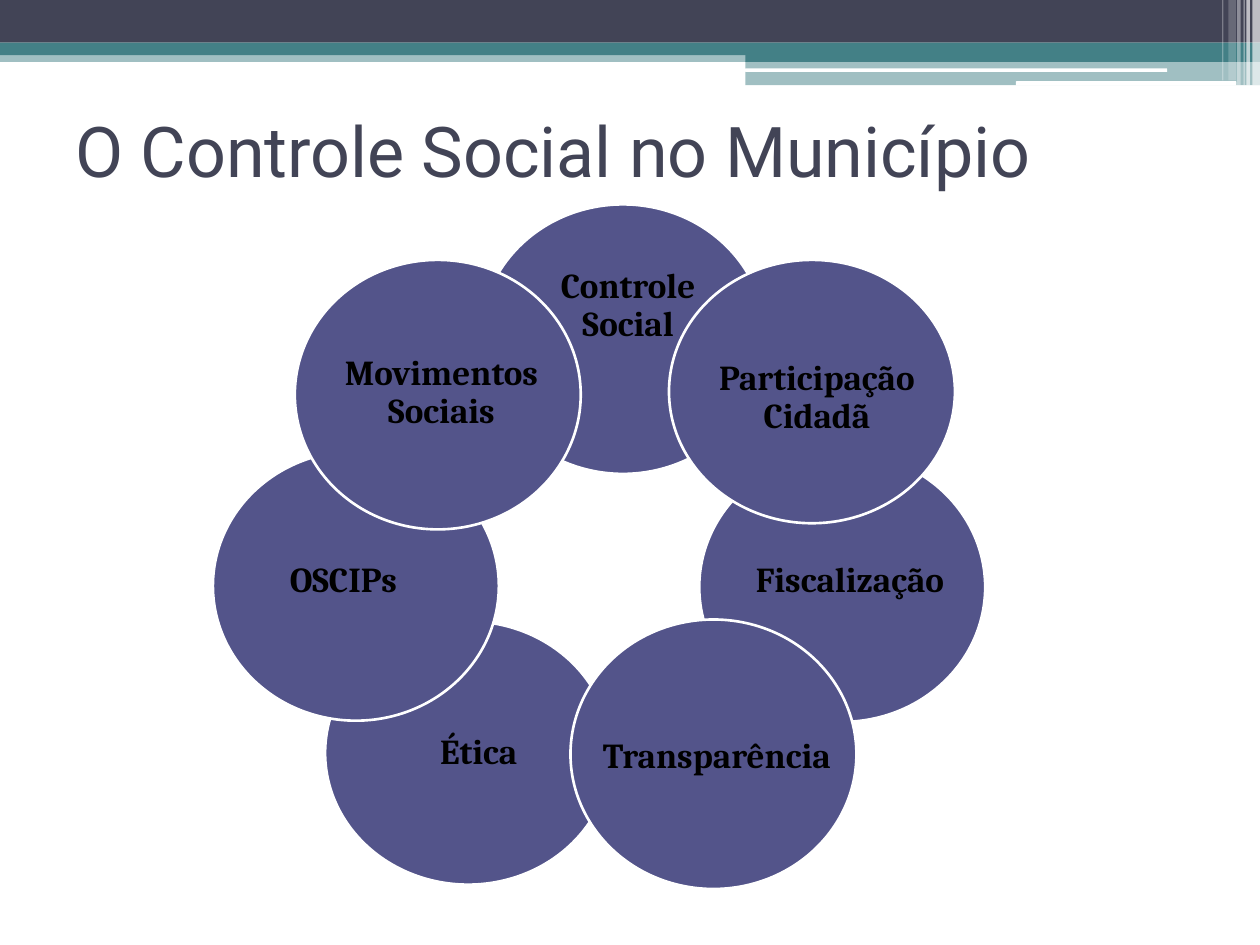
import pptx
import pptx.dml.color
import pptx.enum.shapes
import pptx.enum.text
import pptx.oxml
import pptx.oxml.ns
import pptx.util

Pt = pptx.util.Pt
SHAPES = pptx.enum.shapes.MSO_SHAPE
ALIGN = pptx.enum.text.PP_ALIGN

COLORS = {
    "white": "FFFFFF",
    "slate": "424456",
    "teal": "438086",
    "indigo": "53548A",
    "black": "000000",
}

deck = pptx.Presentation()
deck.slide_width, deck.slide_height = Pt(720), Pt(540)
page = deck.slides.add_slide(deck.slide_layouts[6])


def add_filled(kind, bounds, color, opacity=100):
    shape = page.shapes.add_shape(kind, *map(Pt, bounds))
    shape.shadow.inherit = False
    shape.line.fill.background()
    shape.fill.solid()
    shape.fill.fore_color.rgb = pptx.dml.color.RGBColor.from_string(COLORS[color])
    if opacity < 100:
        color_node = shape.fill._xPr.find(".//" + pptx.oxml.ns.qn("a:srgbClr"))
        color_node.append(pptx.oxml.parse_xml(
            f'<a:alpha {pptx.oxml.ns.nsdecls("a")} val="{opacity * 1000}"/>'))
    return shape


def add_text(bounds, text, font, size, color, margin):
    box = page.shapes.add_textbox(*map(Pt, bounds))
    frame = box.text_frame
    frame.word_wrap = True
    frame.vertical_anchor = pptx.enum.text.MSO_ANCHOR.MIDDLE
    frame.margin_left = frame.margin_right = Pt(margin)
    frame.margin_top = frame.margin_bottom = Pt(margin / 2)
    frame.text = text
    para = frame.paragraphs[0]
    span = para.runs[0]
    span.font.name = font
    span.font.size = Pt(size)
    span.font.color.rgb = pptx.dml.color.RGBColor.from_string(COLORS[color])
    return para


# Header bands
for bounds, color, opacity in [
    ((0, 28.8, 720, 6.6), "teal", 50),
    ((0, 0, 720, 24.4), "slate", 100),
    ((0, 24.4, 720, 7.2), "teal", 100),
    ((426, 28.2, 294, 7.2), "teal", 100),
    ((426, 35, 294, 13.7), "teal", 50),
]:
    add_filled(SHAPES.RECTANGLE, bounds, color, opacity)

# Thin rounded bars under the header
for bounds in [(425.8, 39.1, 241.2, 2), (580.5, 46.4, 126, 2.6)]:
    add_filled(SHAPES.ROUNDED_RECTANGLE, bounds, "white")

# Vertical stripes at the right edge: left, width, height, opacity
for left, width, height, opacity in [
    (715.6, 4.4, 48.9, 65),
    (712.2, 2, 48.9, 65),
    (710.6, 0.7, 48.9, 60),
    (707, 2, 48.9, 40),
    (702, 4.3, 46, 20),
    (698.4, 0.7, 46, 30),
]:
    add_filled(SHAPES.RECTANGLE, (left, 0, width, height), "white", opacity)

# Title
add_text((36, 43.2, 648, 84.2), "O Controle Social no Município",
         "Roboto", 40, "slate", 7.2)

# Ring of overlapping circles, back to front:
# label, circle left, top and height, label bounds
CIRCLE_WIDTH = 163.4
for text, left, top, height, label_bounds in [
    ("Fiscalização", 399.6, 258.5, 154, (405.4, 280, 160.6, 103.7)),
    ("Controle Social", 274.3, 116.8, 154, (312.5, 131, 92.9, 87.8)),
    ("Participação Cidadã", 382.3, 148.5, 150.5, (393.8, 179.3, 146.2, 96.5)),
    ("Ética", 185.8, 355, 150.5, (187.2, 383, 172.8, 94.3)),
    ("Transparência", 326, 354, 154, (323.3, 385.2, 172.8, 94.3)),
    ("OSCIPs", 121.7, 257.8, 154, (115.9, 280, 160.6, 103.7)),
    ("Movimentos Sociais", 168.5, 148.5, 154, (184.3, 190.8, 136, 67.7)),
]:
    circle = add_filled(SHAPES.OVAL, (left, top, CIRCLE_WIDTH, height), "indigo")
    circle.line.color.rgb = pptx.dml.color.RGBColor.from_string(COLORS["white"])
    circle.line.width = Pt(1.5)
    label = add_text(label_bounds, text, "Cambria", 20, "black", 0)
    label.alignment = ALIGN.CENTER
    label.line_spacing = 0.9
    label.runs[0].font.bold = True

deck.save("out.pptx")
